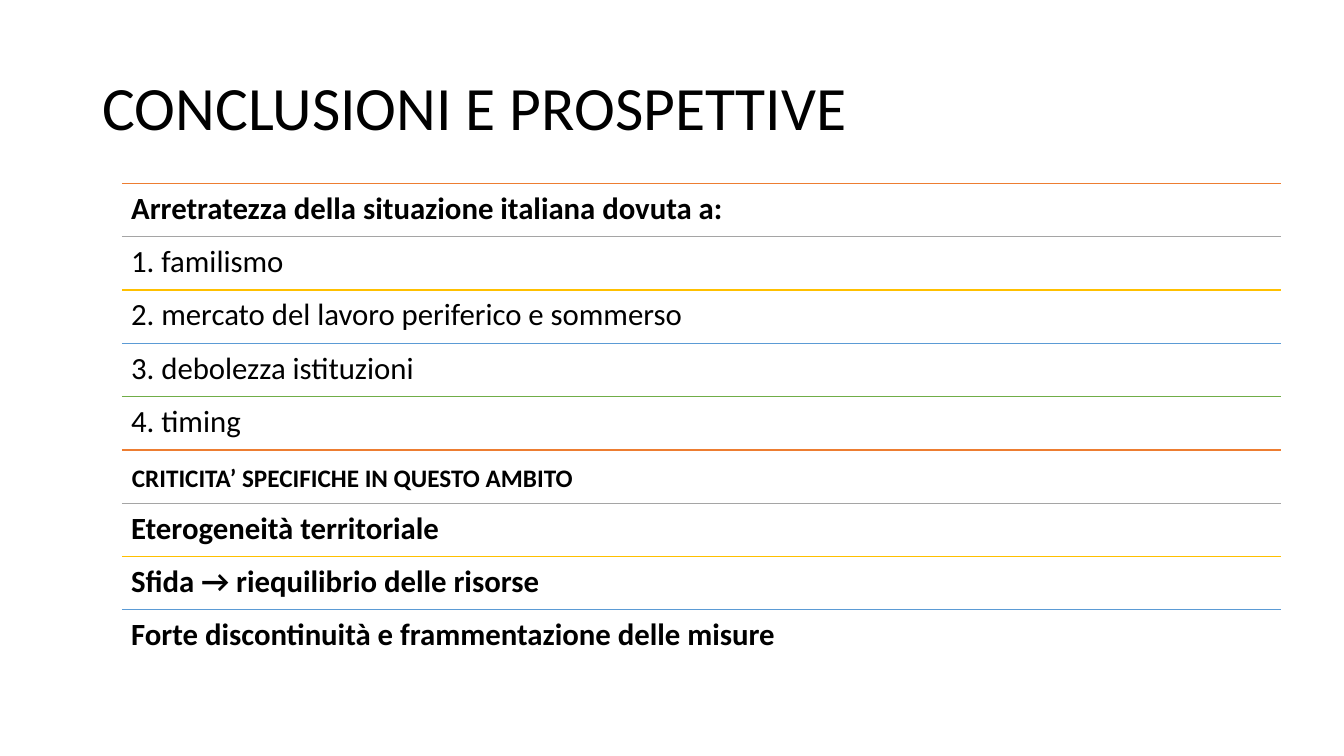
"""Build the slide of conclusions: a title over nine ruled rows."""
from itertools import cycle

from lxml import etree
from pptx import Presentation
from pptx.dml.color import RGBColor
from pptx.enum.shapes import MSO_CONNECTOR
from pptx.enum.text import MSO_ANCHOR, PP_ALIGN
from pptx.oxml.ns import qn
from pptx.util import Pt

STRAIGHT = MSO_CONNECTOR.STRAIGHT
TOP, MIDDLE = MSO_ANCHOR.TOP, MSO_ANCHOR.MIDDLE
LEFT = PP_ALIGN.LEFT

COLORS = {
    "text": "000000",
    "orange": "ED7D31",
    "grey": "A5A5A5",
    "gold": "FFC000",
    "blue": "5B9BD5",
    "green": "70AD47",
}
RULE_ORDER = ("orange", "grey", "gold", "blue", "green")

ROWS_LEFT, ROWS_TOP, ROWS_WIDTH, ROW_HEIGHT = 87.12, 131.1, 828, 38.06
SUBHEADING = {"size": 18, "spacing": 1, "inset": (7.2, 3.6), "drop": 5.5}
HEADING = {"bold": True}
ROWS = (
    ("Arretratezza della situazione italiana dovuta a:", HEADING),
    ("1. familismo", {}),
    ("2. mercato del lavoro periferico e sommerso", {}),
    ("3. debolezza istituzioni", {}),
    ("4. timing", {}),
    ("CRITICITA’ SPECIFICHE IN QUESTO AMBITO", HEADING | SUBHEADING),
    ("Eterogeneità territoriale", HEADING),
    ("Sfida → riequilibrio delle risorse", HEADING),
    ("Forte discontinuità e frammentazione delle misure", HEADING),
)


def write(frame, text, size=22, bold=False, spacing=0.9, inset=(6.6, 6.6), anchor=TOP):
    frame.word_wrap = True
    frame.vertical_anchor = anchor
    frame.margin_left = frame.margin_right = Pt(inset[0])
    frame.margin_top = frame.margin_bottom = Pt(inset[1])
    paragraph = frame.paragraphs[0]
    paragraph.alignment = LEFT
    paragraph.line_spacing = spacing
    run = paragraph.add_run()
    run.text = text
    run.font.name = "Calibri"
    run.font.size = Pt(size)
    run.font.bold = bold
    run.font.color.rgb = RGBColor.from_string(COLORS["text"])


class RuledSlide:
    def __init__(self, slide, rule_width=1):
        self.slide = slide
        self.rule_width = Pt(rule_width)

    def title(self, text, left, top, width, height):
        title = self.slide.shapes.title
        title.left, title.top = Pt(left), Pt(top)
        title.width, title.height = Pt(width), Pt(height)
        write(title.text_frame, text, size=44, inset=(7.2, 3.6), anchor=MIDDLE)

    def rule(self, top, color):
        rule = self.slide.shapes.add_connector(
            STRAIGHT, Pt(ROWS_LEFT), Pt(top), Pt(ROWS_LEFT + ROWS_WIDTH), Pt(top))
        rule.line.width = self.rule_width
        rule.line.color.rgb = RGBColor.from_string(COLORS[color])
        etree.SubElement(rule._element.spPr, qn("a:effectLst"))

    def row(self, text, top, drop=0, **style):
        row = self.slide.shapes.add_textbox(
            Pt(ROWS_LEFT), Pt(top + drop), Pt(ROWS_WIDTH), Pt(ROW_HEIGHT - 1.7 * drop))
        write(row.text_frame, text, **style)


def main():
    deck = Presentation()
    deck.slide_width, deck.slide_height = Pt(960), Pt(540)
    title_only = deck.slide_layouts[5]
    conclusions = RuledSlide(deck.slides.add_slide(title_only))
    conclusions.title("CONCLUSIONI E PROSPETTIVE", 66, 26.6, 828, 104.4)
    for index, ((text, style), color) in enumerate(zip(ROWS, cycle(RULE_ORDER))):
        top = ROWS_TOP + index * ROW_HEIGHT
        conclusions.rule(top, color)
        conclusions.row(text, top, **style)
    deck.save("out.pptx")


if __name__ == "__main__":
    main()
